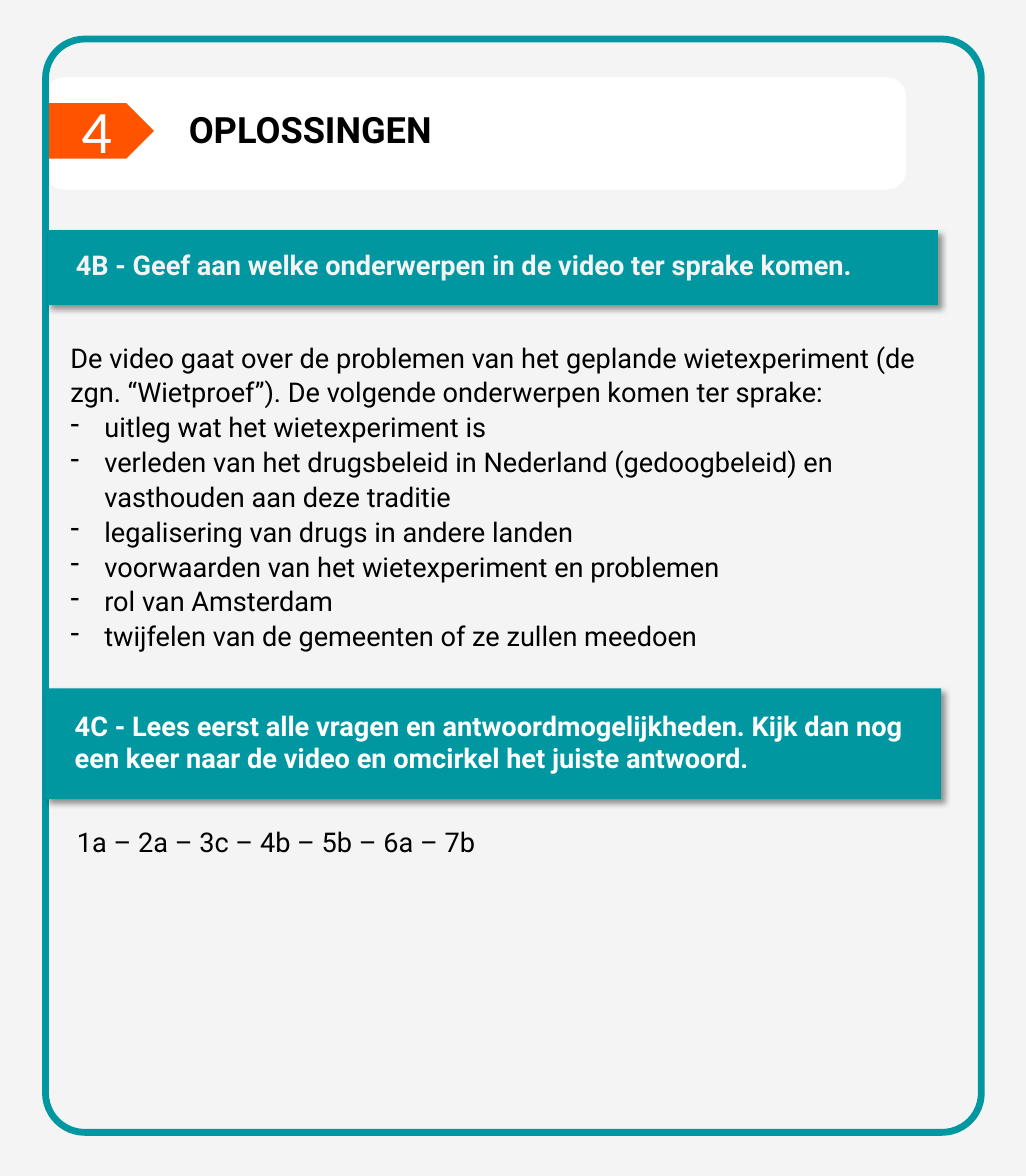
from lxml.etree import SubElement as Sub
from pptx import Presentation
from pptx.dml.color import RGBColor as RGB
from pptx.enum.shapes import MSO_SHAPE as Kind
from pptx.enum.text import MSO_AUTO_SIZE as Auto
from pptx.oxml.ns import qn
from pptx.util import Pt

TEAL, ORANGE = "0097A1", "FF5300"
WHITE, GREY, BLACK = "FFFFFF", "F4F4F4", "000000"
EDGE = 30.2  # left side of the frame

INTRO = ("De video gaat over de problemen van het geplande wietexperiment "
         "(de zgn. “Wietproef”). De volgende onderwerpen komen ter sprake:")
TOPICS = [
    "uitleg wat het wietexperiment is",
    "verleden van het drugsbeleid in Nederland (gedoogbeleid) en "
    "vasthouden aan deze traditie",
    "legalisering van drugs in andere landen",
    "voorwaarden van het wietexperiment en problemen",
    "rol van Amsterdam",
    "twijfelen van de gemeenten of ze zullen meedoen",
]
TASK_B = "4B - Geef aan welke onderwerpen in de video ter sprake komen."
TASK_C = ("4C - Lees eerst alle vragen en antwoordmogelijkheden. Kijk dan nog "
          "een keer naar de video en omcirkel het juiste antwoord.")


def paint(fill, color):
    fill.solid()
    fill.fore_color.rgb = RGB.from_string(color)


def add_box(slide, kind, place, fill=None, line=None, width=1):
    box = slide.shapes.add_shape(kind, *map(Pt, place))
    box.shadow.inherit = False
    if fill:
        paint(box.fill, fill)
    else:
        box.fill.background()
    if line:
        paint(box.line.fill, line)
        box.line.width = Pt(width)
    else:
        box.line.fill.background()
    return box


def add_shade(box):
    effects = box._element.spPr.find(qn("a:effectLst"))
    shade = Sub(effects, qn("a:outerShdw"), blurRad=str(Pt(4)),
                dist=str(Pt(3)), dir=str(45 * 60000), algn="tl", rotWithShape="0")
    color = Sub(shade, qn("a:srgbClr"), val=BLACK)
    Sub(color, qn("a:alpha"), val="40000")


def add_dash(para):
    props = para._p.get_or_add_pPr()
    props.set("marL", str(Pt(22.5)))
    props.set("indent", str(-Pt(22.5)))
    Sub(props, qn("a:buChar"), char="-")


def add_text(slide, place, lines, size=18, color=BLACK, bold=False,
             face="Roboto", space=None, dashed=False, inset=7.2):
    frame = slide.shapes.add_textbox(*map(Pt, place)).text_frame
    frame.word_wrap = True
    frame.auto_size = Auto.SHAPE_TO_FIT_TEXT
    frame.margin_left = Pt(inset)
    frame.text = "\n".join(lines)
    for i, para in enumerate(frame.paragraphs):
        if space:
            para.line_spacing = space
        if dashed and i > 0:
            add_dash(para)
        font = para.font
        font.name, font.size, font.bold = face, Pt(size), bold
        paint(font.fill, color)


def add_task(slide, bar, place, text, color, space=None):
    add_shade(add_box(slide, Kind.RECTANGLE, bar, TEAL))
    add_text(slide, place, [text], color=color, bold=True, space=space)


def main():
    deck = Presentation()
    deck.slide_width, deck.slide_height = Pt(680.4), Pt(779.8)
    slide = deck.slides.add_slide(deck.slide_layouts[6])
    paint(slide.background.fill, GREY)

    # Title card with number tag
    add_box(slide, Kind.ROUNDED_RECTANGLE, (EDGE, 51.8, 570.2, 73.4), WHITE, WHITE)
    add_box(slide, Kind.PENTAGON, (EDGE, 68.4, 72, 36.7), ORANGE)
    add_text(slide, (118.1, 67.7, 447.1, 36), ["OPLOSSINGEN"], 24, bold=True)

    # Frame around the page
    frame = add_box(slide, Kind.ROUNDED_RECTANGLE, (EDGE, 25.9, 620.6, 725),
                    line=TEAL, width=4.5)
    frame.adjustments[0] = 0.042
    add_text(slide, (28.8, 58.3, 73.4, 55.4), ["4"], 40, WHITE,
             face="Calibri", inset=25.2)

    # Answers
    add_text(slide, (39.6, 221, 582.5, 239), [INTRO, *TOPICS],
             space=1.07, dashed=True)
    add_text(slide, (43.9, 542.2, 293.8, 28.8),
             ["1a – 2a – 3c – 4b – 5b – 6a – 7b"], space=1.07)

    # Task bars
    add_task(slide, (31.7, 152.6, 590.4, 49.7), (43.2, 159.8, 558.7, 28.8),
             TASK_B, GREY, 1.07)
    add_task(slide, (EDGE, 456.5, 594, 73.4), (42.5, 466.6, 571, 51.1),
             TASK_C, WHITE)

    deck.save("out.pptx")


if __name__ == "__main__":
    main()
